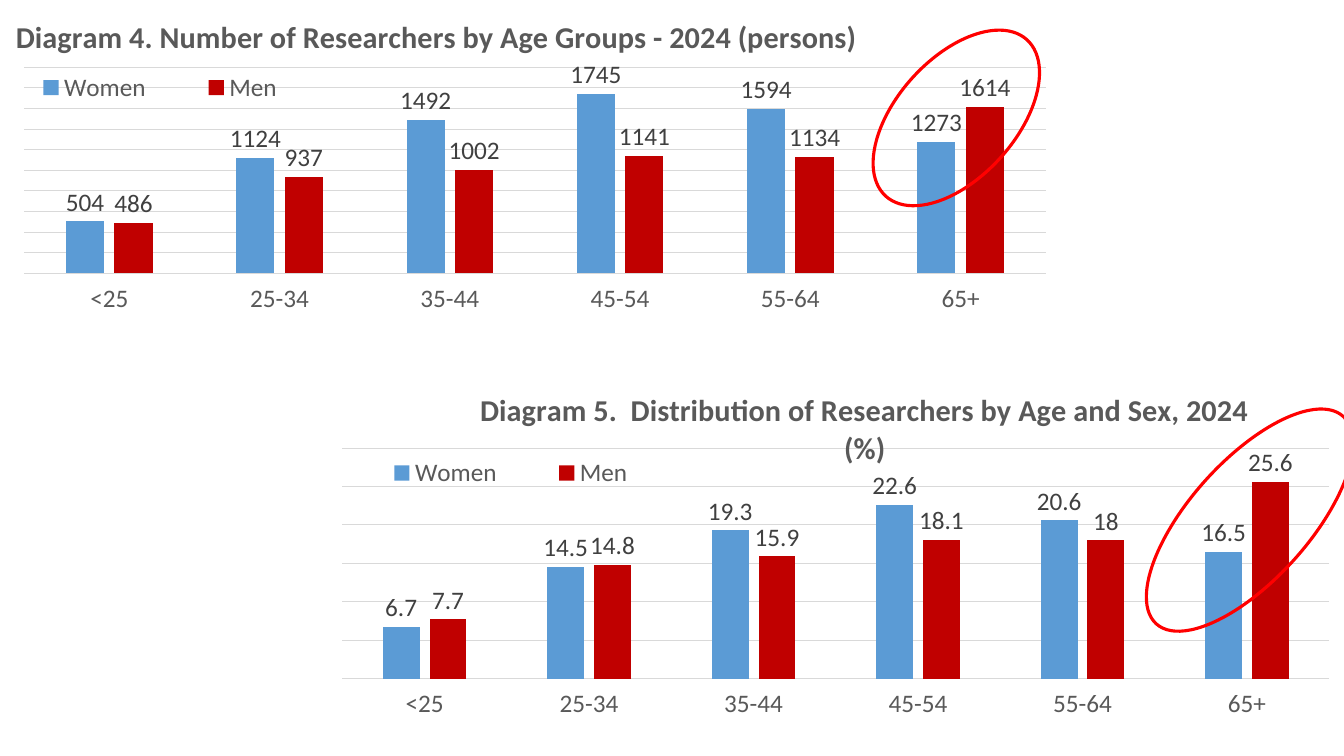
from lxml.etree import SubElement, Element
from pptx import Presentation
from pptx.chart.data import CategoryChartData
from pptx.dml.color import RGBColor
from pptx.enum.chart import (XL_CHART_TYPE, XL_LABEL_POSITION, XL_LEGEND_POSITION,
                             XL_TICK_LABEL_POSITION, XL_TICK_MARK)
from pptx.enum.shapes import MSO_SHAPE
from pptx.oxml.ns import qn
from pptx.util import Inches, Pt

COLORS = {"women": "5B9BD5", "men": "C00000", "text": "595959",
          "label": "404040", "grid": "D9D9D9", "ring": "FF0000"}
AGES = ["<25", "25-34", "35-44", "45-54", "55-64", "65+"]


def color(name):
    """Return the named colour."""
    return RGBColor.from_string(COLORS[name])


def style(font, size=18, fill="text", bold=False):
    """Set the look of a font."""
    font.name, font.size, font.bold = "Calibri", Pt(size), bold
    font.color.rgb = color(fill)


def write(frame, text, **look):
    """Put formatted text in a frame."""
    run = frame.paragraphs[0].add_run()
    run.text = text
    style(run.font, **look)


def stroke(line, fill, width):
    """Set the colour and width of a line."""
    line.color.rgb = color(fill)
    line.width = Pt(width)


def place(part, index, inner=False, **spots):
    """Give a chart part a manual layout in fractions of the chart."""
    for old in part.findall(qn("c:layout")):
        part.remove(old)
    layout = Element(qn("c:layout"))
    part.insert(index, layout)
    manual = SubElement(layout, qn("c:manualLayout"))
    if inner:
        SubElement(manual, qn("c:layoutTarget")).set("val", "inner")
    for key in ("x", "y"):
        SubElement(manual, qn(f"c:{key}Mode")).set("val", "edge")
    for key, value in spots.items():
        SubElement(manual, qn(f"c:{key}")).set("val", str(value))


def axes(chart, top, step):
    """Format both axes and the grid."""
    ages, scale = chart.category_axis, chart.value_axis
    ages.major_tick_mark = ages.minor_tick_mark = XL_TICK_MARK.NONE
    ages.tick_label_position = XL_TICK_LABEL_POSITION.LOW
    style(ages.tick_labels.font)
    stroke(ages.format.line, "grid", 0.75)
    scale.minimum_scale, scale.maximum_scale, scale.major_unit = 0, top, step
    scale.has_major_gridlines = True
    stroke(scale.major_gridlines.format.line, "grid", 0.75)
    scale.visible = False


def bars(plot):
    """Format the columns and their labels."""
    plot.gap_width, plot.overlap, plot.vary_by_categories = 219, -27, False
    for series in plot.series:
        series.format.fill.solid()
        series.format.fill.fore_color.rgb = color(series.name.lower())
        labels = series.data_labels
        labels.show_value = True
        labels.position = XL_LABEL_POSITION.OUTSIDE_END
        style(labels.font, fill="label")


def diagram(slide, box, title, women, men, top, step, spots):
    """Draw one column chart in its box."""
    data = CategoryChartData()
    data.categories = AGES
    data.add_series("Women", women)
    data.add_series("Men", men)
    chart = slide.shapes.add_chart(XL_CHART_TYPE.COLUMN_CLUSTERED,
                                   *map(Inches, box), data).chart
    style(chart.font)
    chart.has_title = chart.has_legend = True
    write(chart.chart_title.text_frame, title, size=21.6, bold=True)
    chart.legend.position = XL_LEGEND_POSITION.BOTTOM
    chart.legend.include_in_layout = False
    style(chart.legend.font)
    axes(chart, top, step)
    bars(chart.plots[0])
    body = chart.element.find(qn("c:chart"))
    place(body.find(qn("c:title")), 1, **spots["title"])
    place(body.find(qn("c:legend")), 1, **spots["legend"])
    place(body.find(qn("c:plotArea")), 0, inner=True, **spots["plot"])


def ring(slide, box):
    """Draw a tilted ring around the oldest group."""
    oval = slide.shapes.add_shape(MSO_SHAPE.OVAL, *map(Inches, box))
    oval.rotation = 312
    oval.shadow.inherit = False
    oval.fill.background()
    stroke(oval.line, "ring", 2.25)


def main():
    """Build the slide and save it."""
    deck = Presentation()
    deck.slide_width, deck.slide_height = Inches(13.33), Inches(7.5)
    slide = deck.slides.add_slide(deck.slide_layouts[6])
    diagram(slide, (-0.11, 0, 10.61, 3.28),
            "Diagram 4. Number of Researchers by Age Groups - 2024 (persons)",
            [504, 1124, 1492, 1745, 1594, 1273],
            [486, 937, 1002, 1141, 1134, 1614], 2000, 200,
            {"title": dict(x=0.02, y=0.03),
             "legend": dict(x=0, y=0.2, w=0.32, h=0.13),
             "plot": dict(x=0.033, y=0.204, w=0.955, h=0.623)})
    diagram(slide, (3.17, 3.61, 10.25, 3.8),
            "Diagram 5.  Distribution of Researchers by Age and Sex, 2024 (%)",
            [6.7, 14.5, 19.3, 22.6, 20.6, 16.5],
            [7.7, 14.8, 15.9, 18.1, 18, 25.6], 30, 5,
            {"title": dict(x=0.15, y=0.05),
             "legend": dict(x=0.02, y=0.23, w=0.33, h=0.11),
             "plot": dict(x=0.022, y=0.22, w=0.955, h=0.602)})
    ring(slide, (11.01, 4.57, 2.77, 1.18))
    ring(slide, (8.44, 0.58, 2.09, 1.18))
    deck.save("out.pptx")


if __name__ == "__main__":
    main()
